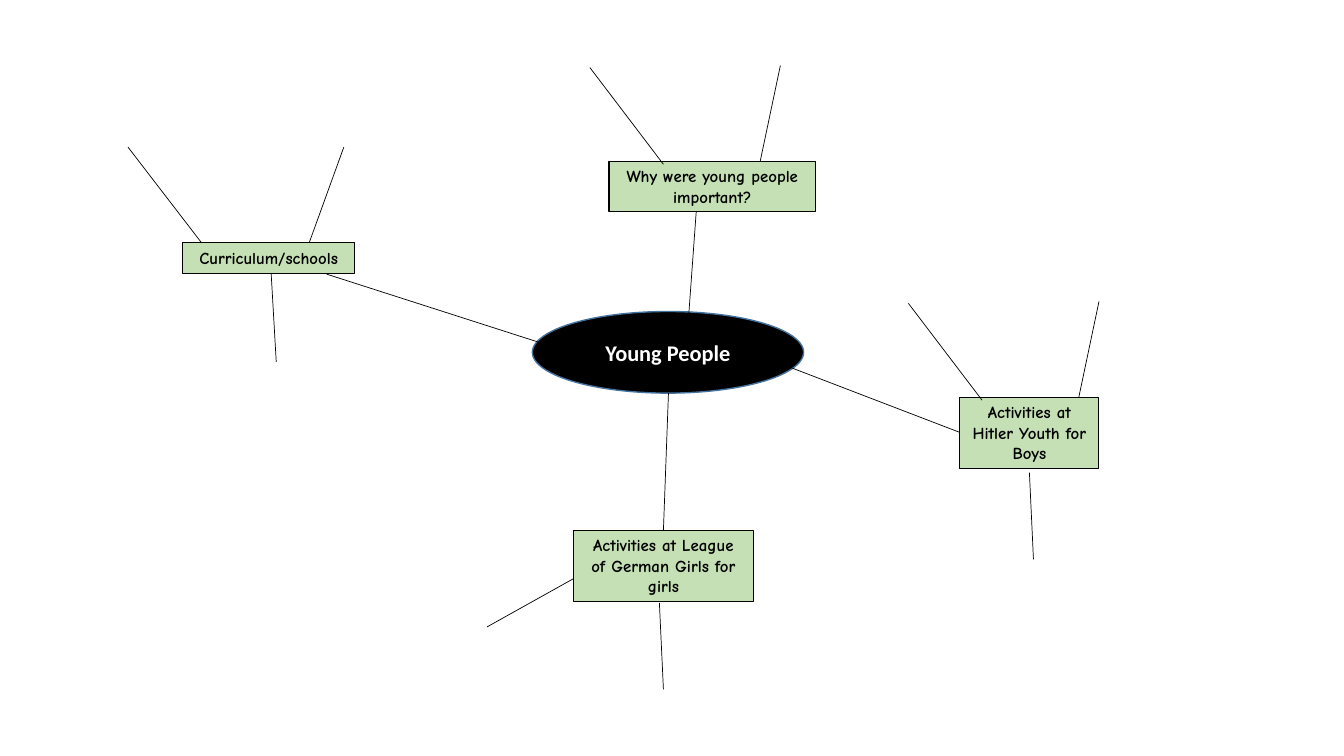
import pptx
import pptx.util
import pptx.dml.color
import pptx.enum.shapes
import pptx.enum.text
import lxml.etree

Inches, Pt = pptx.util.Inches, pptx.util.Pt
RGBColor = pptx.dml.color.RGBColor
MSO_SHAPE = pptx.enum.shapes.MSO_SHAPE

BLACK = RGBColor(0x00, 0x00, 0x00)
WHITE = RGBColor(0xFF, 0xFF, 0xFF)
GREEN = RGBColor(0xC5, 0xE0, 0xB4)
BLUE = RGBColor(0x43, 0x73, 0x9E)

prs = pptx.Presentation()
prs.slide_width, prs.slide_height = Inches(13.33), Inches(7.5)
s = prs.slides.add_slide(prs.slide_layouts[6])


def add_node(text, box, *, shape=MSO_SHAPE.RECTANGLE, fill=GREEN, line=BLACK,
             width=0.75, font="Comic Neue", size=12, color=BLACK,
             anchor=pptx.enum.text.MSO_ANCHOR.TOP):
    sp = s.shapes.add_shape(shape, *map(Inches, box))
    sp.shadow.inherit = False
    sp.fill.solid()
    sp.fill.fore_color.rgb = fill
    sp.line.color.rgb = line
    sp.line.width = Pt(width)
    tf = sp.text_frame
    tf.word_wrap = True
    tf.vertical_anchor = anchor
    p = tf.paragraphs[0]
    p.alignment = pptx.enum.text.PP_ALIGN.CENTER
    r = p.add_run()
    r.text = text
    r.font.name, r.font.size, r.font.bold = font, Pt(size), True
    r.font.color.rgb = color


def add_line(x1, y1, x2, y2):
    c = s.shapes.add_connector(pptx.enum.shapes.MSO_CONNECTOR.STRAIGHT,
                               Inches(x1), Inches(y1), Inches(x2), Inches(y2))
    c.line.color.rgb = BLACK
    c.line.width = Pt(0.5)
    lxml.etree.SubElement(c._element.spPr, pptx.oxml.ns.qn("a:effectLst"))


# Central topic
add_node("Young People", (5.28, 3.09, 2.69, 0.81), shape=MSO_SHAPE.OVAL,
         fill=BLACK, line=BLUE, width=1, font="Calibri", size=16, color=WHITE,
         anchor=pptx.enum.text.MSO_ANCHOR.MIDDLE)

# Subtopics: text, box, link to the centre, open branches
subtopics = [
    ("Activities at League of German Girls for girls", (5.69, 5.26, 1.78, 0.71),
     (6.58, 5.26, 6.63, 3.9),
     [(6.58, 6.84, 6.54, 5.98), (5.69, 5.74, 4.83, 6.22)]),
    ("Why were young people important?", (6.04, 1.6, 2.05, 0.5),
     (6.83, 3.14, 6.92, 1.9),
     [(6.58, 1.63, 5.85, 0.67), (7.54, 1.6, 7.74, 0.65)]),
    ("Activities at Hitler Youth for Boys", (9.52, 3.94, 1.38, 0.71),
     (7.54, 3.53, 9.52, 4.29),
     [(9.74, 3.97, 9.01, 3.01), (10.7, 3.94, 10.9, 2.99),
      (10.25, 5.55, 10.21, 4.69)]),
    ("Curriculum/schools", (1.81, 2.41, 1.71, 0.3),
     (5.42, 3.42, 3.24, 2.72),
     [(2, 2.41, 1.27, 1.46), (3.07, 2.4, 3.41, 1.46),
      (2.74, 3.59, 2.69, 2.72)]),
]
for text, box, link, branches in subtopics:
    add_line(*link)
    add_node(text, box)
    for branch in branches:
        add_line(*branch)

prs.save("out.pptx")
